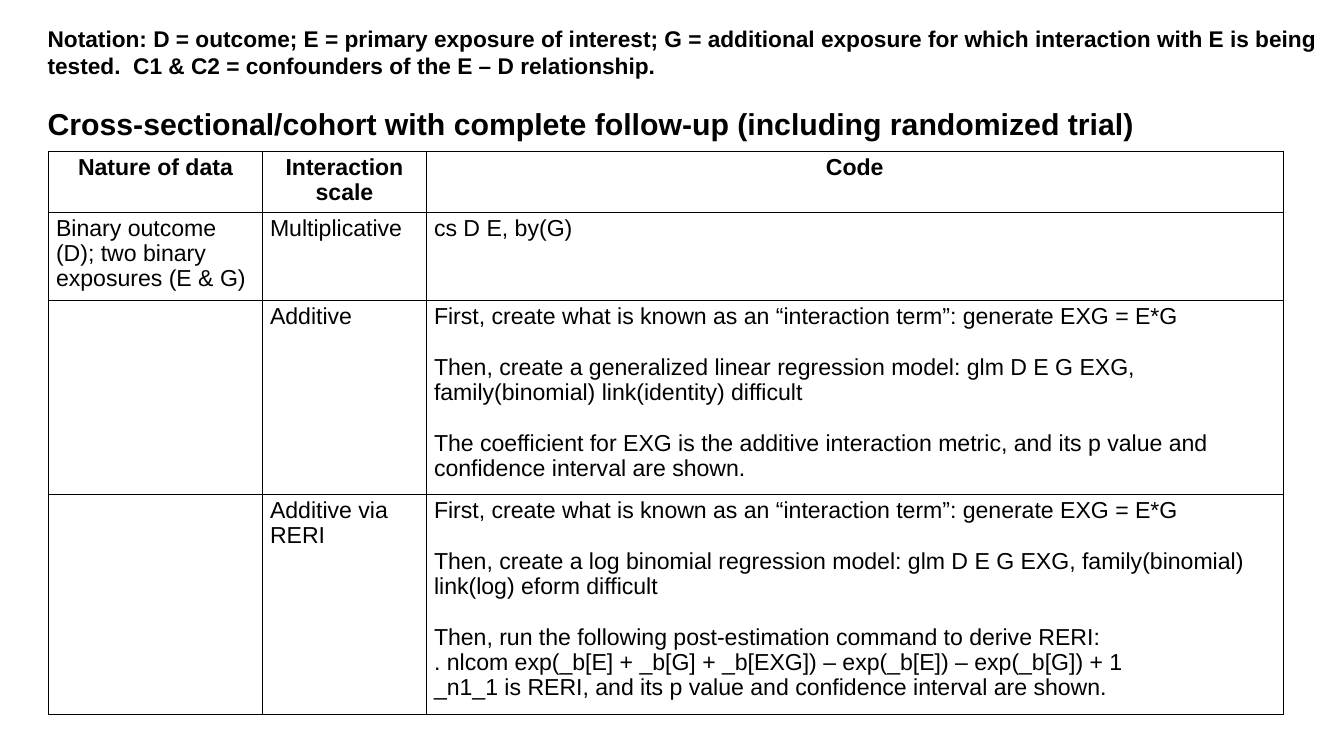
"""Build the slide on code for testing interaction in cross-sectional and cohort data."""
from dataclasses import dataclass

from lxml.etree import SubElement
from pptx import Presentation
from pptx.dml.color import RGBColor as Color
from pptx.enum.text import MSO_ANCHOR as Anchor, PP_ALIGN as Align
from pptx.oxml.ns import qn
from pptx.util import Cm, Pt


@dataclass(frozen=True)
class Theme:
    font: str = "Arial"
    ink: str = "000000"
    note_size: float = 21.6
    heading_size: float = 28.8
    cell_size: float = 22
    cell_spacing: float = 0.97
    gap: float = 24.6
    border: float = 1


class SlideBuilder:
    def __init__(self, slide, theme):
        self.slide = slide
        self.theme = theme

    def add_span(self, para, text, size, bold=False):
        span = para.add_run()
        span.text = text
        span.font.name = self.theme.font
        span.font.size = Pt(size)
        span.font.bold = bold
        span.font.color.rgb = Color.from_string(self.theme.ink)

    def add_title(self, left, top, width, height, note, heading):
        box = self.slide.shapes.add_textbox(Cm(left), Cm(top), Cm(width), Cm(height))
        frame = box.text_frame
        frame.word_wrap = True
        frame.vertical_anchor = Anchor.BOTTOM
        self.add_span(frame.paragraphs[0], note, self.theme.note_size, True)
        para = frame.add_paragraph()
        para.space_before = Pt(self.theme.gap)
        self.add_span(para, heading, self.theme.heading_size, True)

    def add_borders(self, cell):
        properties = cell._tc.get_or_add_tcPr()
        for side in ("a:lnL", "a:lnR", "a:lnT", "a:lnB"):
            line = SubElement(properties, qn(side), w=str(Pt(self.theme.border)))
            fill = SubElement(line, qn("a:solidFill"))
            SubElement(fill, qn("a:srgbClr"), val=self.theme.ink)

    def fill_cell(self, cell, blocks, header):
        self.add_borders(cell)
        cell.fill.background()
        frame = cell.text_frame
        para = frame.paragraphs[0]
        for block_index, block in enumerate(blocks):
            for line_index, text in enumerate(block):
                if block_index or line_index:
                    para = frame.add_paragraph()
                if block_index and not line_index:
                    para.space_before = Pt(self.theme.gap)
                para.line_spacing = self.theme.cell_spacing
                para.alignment = Align.CENTER if header else Align.LEFT
                self.add_span(para, text, self.theme.cell_size, header)

    def add_table(self, left, top, widths, heights, rows):
        table = self.slide.shapes.add_table(
            len(heights), len(widths), Cm(left), Cm(top), Cm(sum(widths)), Cm(sum(heights))
        ).table
        table.first_row = table.horz_banding = False
        for column, width in zip(table.columns, widths):
            column.width = Cm(width)
        for row_index, (height, row) in enumerate(zip(heights, rows)):
            table.rows[row_index].height = Cm(height)
            for column_index, blocks in enumerate(row):
                self.fill_cell(table.cell(row_index, column_index), blocks, row_index == 0)


NOTE = (
    "Notation: D = outcome; E = primary exposure of interest; G = additional exposure for which "
    "interaction with E is being tested.  C1 & C2 = confounders of the E – D relationship."
)
HEADING = "Cross-sectional/cohort with complete follow-up (including randomized trial)"
TERM = ["First, create what is known as an “interaction term”: generate EXG = E*G"]
ADDITIVE = [
    TERM,
    ["Then, create a generalized linear regression model: glm D E G EXG, "
     "family(binomial) link(identity) difficult"],
    ["The coefficient for EXG is the additive interaction metric, and its p value and "
     "confidence interval are shown."],
]
RERI = [
    TERM,
    ["Then, create a log binomial regression model: glm D E G EXG, family(binomial) "
     "link(log) eform difficult"],
    ["Then, run the following post-estimation command to derive RERI:",
     ". nlcom exp(_b[E] + _b[G] + _b[EXG]) – exp(_b[E]) – exp(_b[G]) + 1",
     "_n1_1 is RERI, and its p value and confidence interval are shown."],
]
ROWS = [
    ([["Nature of data"]], [["Interaction scale"]], [["Code"]]),
    ([["Binary outcome (D); two binary exposures (E & G)"]], [["Multiplicative"]],
     [["cs D E, by(G)"]]),
    ([], [["Additive"]], ADDITIVE),
    ([], [["Additive via RERI"]], RERI),
]


def main():
    deck = Presentation()
    deck.slide_width, deck.slide_height = Cm(45.16), Cm(25.4)
    page = SlideBuilder(deck.slides.add_slide(deck.slide_layouts[6]), Theme())
    page.add_title(1.35, 3.61, 43.74, 1.27, NOTE, HEADING)
    page.add_table(1.63, 5.08, (7.19, 5.51, 28.78), (1.98, 2.86, 6.35, 7.19), ROWS)
    deck.save("out.pptx")


if __name__ == "__main__":
    main()
